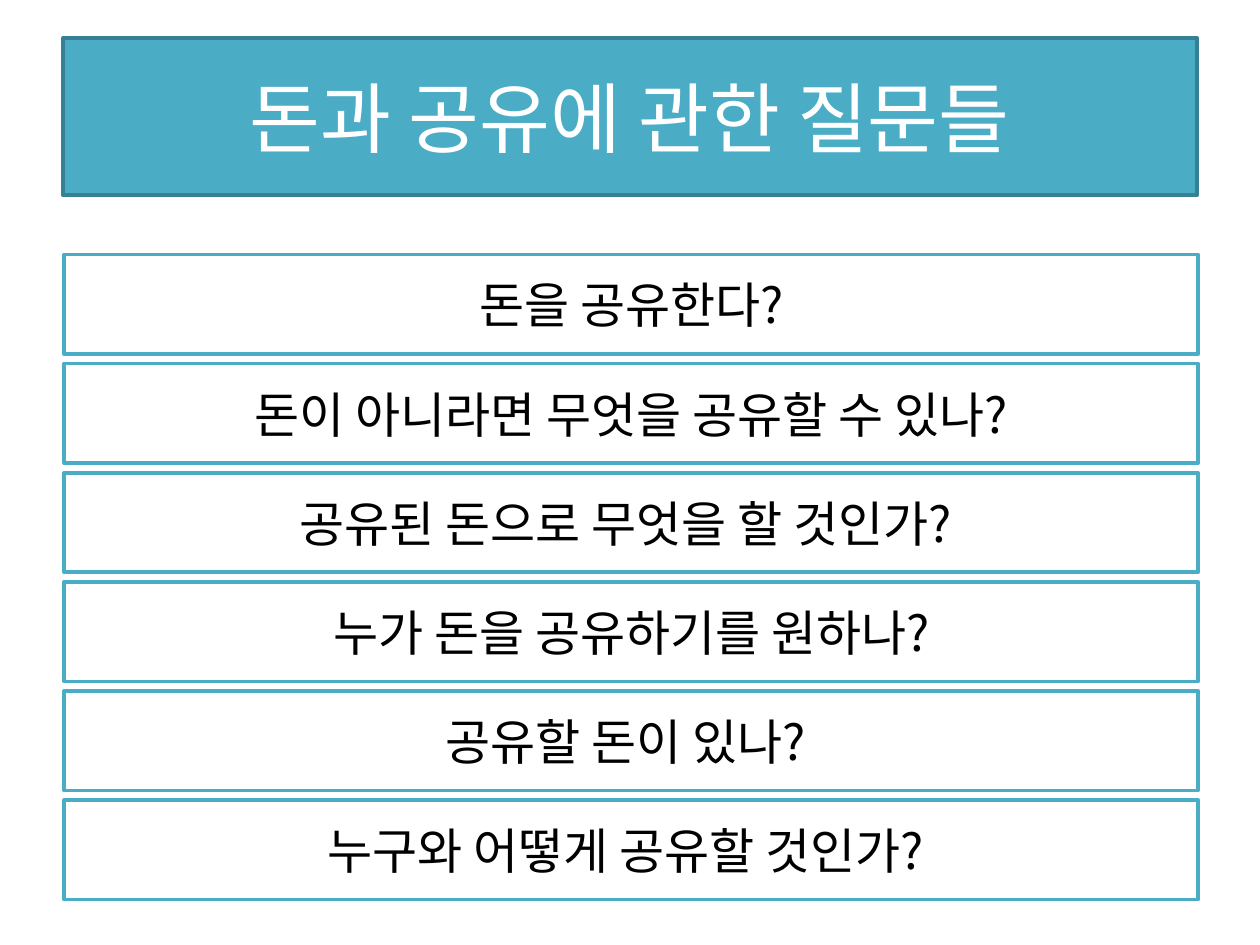
from dataclasses import dataclass

from lxml import etree
from pptx import Presentation
from pptx.dml.color import RGBColor
from pptx.enum.shapes import MSO_SHAPE
from pptx.enum.text import MSO_ANCHOR, PP_ALIGN
from pptx.oxml.ns import qn
from pptx.util import Inches, Pt

RECTANGLE = MSO_SHAPE.RECTANGLE
MIDDLE = MSO_ANCHOR.MIDDLE
CENTER = PP_ALIGN.CENTER


@dataclass(frozen=True)
class Theme:
    font: str = "Noto Sans CJK KR"
    teal: RGBColor = RGBColor(0x4B, 0xAC, 0xC6)
    dark_teal: RGBColor = RGBColor(0x37, 0x7F, 0x92)
    white: RGBColor = RGBColor(0xFF, 0xFF, 0xFF)
    black: RGBColor = RGBColor(0, 0, 0)
    title_size: Pt = Pt(44)
    question_size: Pt = Pt(28)
    border: Pt = Pt(2)


THEME = Theme()

QUESTIONS = [
    "돈을 공유한다?",
    "돈이 아니라면 무엇을 공유할 수 있나?",
    "공유된 돈으로 무엇을 할 것인가? ",
    "누가 돈을 공유하기를 원하나?",
    "공유할 돈이 있나? ",
    "누구와 어떻게 공유할 것인가? ",
]
BOX_WIDTH = 9
QUESTION_LEFT, QUESTION_TOP = 0.51, 2.02
QUESTION_HEIGHT, QUESTION_PITCH = 0.79, 0.866


def add_box(slide, text, bounds, fill, border, size, color):
    box = slide.shapes.add_shape(RECTANGLE, *(Inches(v) for v in bounds))
    box.shadow.inherit = False
    box.fill.solid()
    box.fill.fore_color.rgb = fill
    box.line.color.rgb = border
    box.line.width = THEME.border

    frame = box.text_frame
    frame.word_wrap = True
    frame.vertical_anchor = MIDDLE
    paragraph = frame.paragraphs[0]
    paragraph.alignment = CENTER
    run = paragraph.add_run()
    run.text = text
    for attribute, value in {"name": THEME.font, "size": size}.items():
        setattr(run.font, attribute, value)
    run.font.color.rgb = color
    # Hangul takes its typeface from the East Asian font
    east_asian = etree.SubElement(run.font._element, qn("a:ea"))
    east_asian.set("typeface", THEME.font)


prs = Presentation()
prs.slide_width, prs.slide_height = Inches(10), Inches(7.5)
slide = prs.slides.add_slide(prs.slide_layouts[6])

add_box(slide, "돈과 공유에 관한 질문들", (0.5, 0.3, BOX_WIDTH, 1.25),
        THEME.teal, THEME.dark_teal, THEME.title_size, THEME.white)

for row, question in enumerate(QUESTIONS):
    top = QUESTION_TOP + row * QUESTION_PITCH
    add_box(slide, question, (QUESTION_LEFT, top, BOX_WIDTH, QUESTION_HEIGHT),
            THEME.white, THEME.teal, THEME.question_size, THEME.black)

prs.save("out.pptx")
